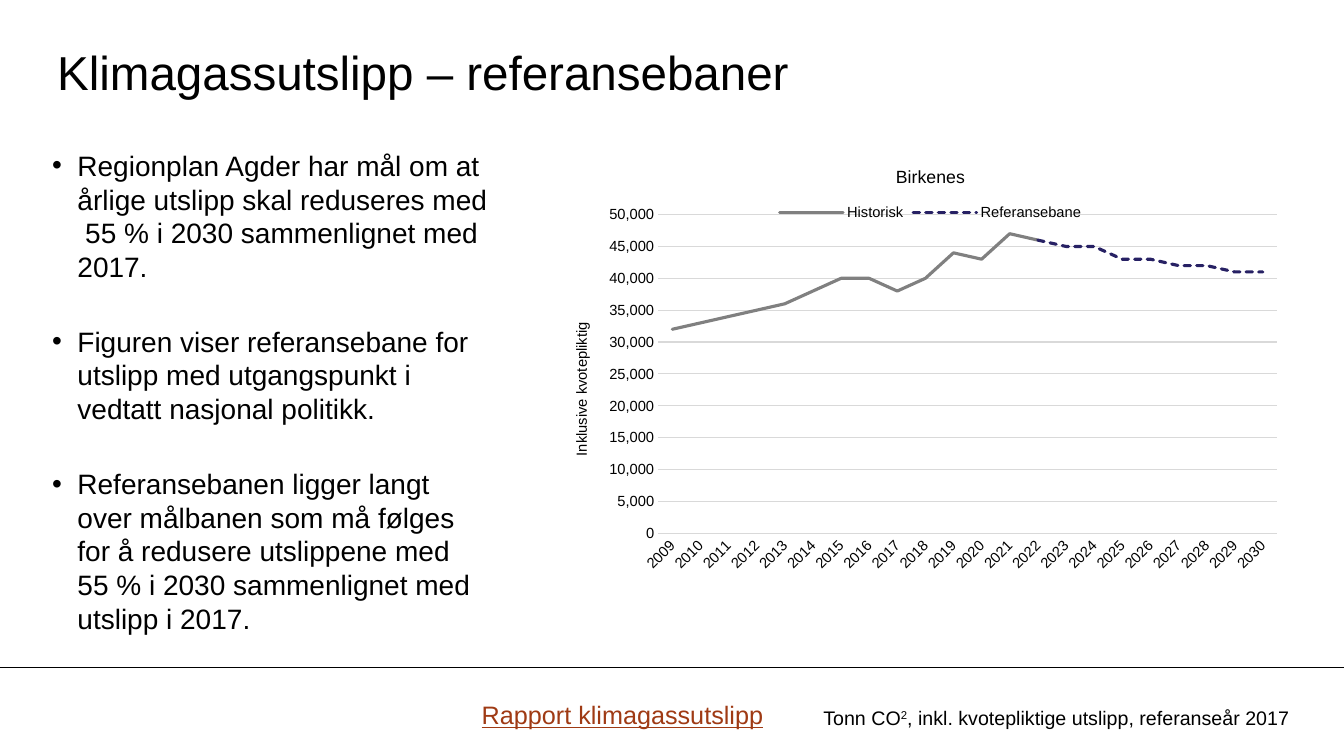
from lxml.etree import SubElement
from pptx import Presentation
from pptx.chart.data import CategoryChartData
from pptx.dml.color import RGBColor
from pptx.enum.chart import XL_CHART_TYPE, XL_LEGEND_POSITION, XL_TICK_MARK
from pptx.enum.dml import MSO_LINE
from pptx.enum.shapes import MSO_CONNECTOR
from pptx.enum.text import MSO_ANCHOR, MSO_AUTO_SIZE, PP_ALIGN
from pptx.oxml.ns import qn
from pptx.util import Pt

WIDE, HIGH = 960, 540
HUES = {"ink": "000000", "link": "9F3A14", "grid": "D9D9D9",
        "past": "808080", "path": "272164"}
POINTS = [
    "Regionplan Agder har mål om at årlige utslipp skal reduseres med  55 % i 2030 "
    "sammenlignet med 2017.",
    "Figuren viser referansebane for utslipp med utgangspunkt i vedtatt nasjonal politikk.",
    "Referansebanen ligger langt over målbanen som må følges for å redusere utslippene med "
    "55 % i 2030 sammenlignet med utslipp i 2017.",
]
YEARS = range(2009, 2031)
PAST = [32000, 33000, 34000, 35000, 36000, 38000, 40000, 40000, 38000, 40000,
        44000, 43000, 47000, 46000]
PATH = [46000, 45000, 45000, 43000, 43000, 42000, 42000, 41000, 41000]
PLOT = {"x": 0.137, "y": 0.147, "w": 0.825, "h": 0.698}
NO_PAD = {f"margin_{side}": 0 for side in ("left", "top", "right", "bottom")}


def apply(item, **vals):
    for key, val in vals.items():
        setattr(item, key, val)


def hue(name):
    return RGBColor.from_string(HUES[name])


def style(font, size, name="ink", **more):
    apply(font, size=Pt(size), name="Arial", **more)
    font.color.rgb = hue(name)


def place(shape, box):
    apply(shape, **dict(zip(("left", "top", "width", "height"), map(Pt, box))))


def stroke(line, name, width):
    line.color.rgb = hue(name)
    line.width = Pt(width)


def add_title(slide, box):
    title = slide.shapes.title
    place(title, box)
    frame = title.text_frame
    apply(frame, text="Klimagassutslipp – referansebaner", word_wrap=True,
          auto_size=MSO_AUTO_SIZE.NONE, vertical_anchor=MSO_ANCHOR.MIDDLE, **NO_PAD)
    para = frame.paragraphs[0]
    para.alignment = PP_ALIGN.LEFT
    style(para.runs[0].font, 34)


def add_list(slide, box):
    body = slide.placeholders[1]
    place(body, box)
    frame = body.text_frame
    apply(frame, text="\n".join(POINTS), word_wrap=True,
          auto_size=MSO_AUTO_SIZE.NONE, **NO_PAD)
    for num, para in enumerate(frame.paragraphs):
        props = para._p.get_or_add_pPr()
        props.set("marL", str(Pt(18)))
        props.set("indent", str(Pt(-18)))
        apply(para, line_spacing=1.0, space_before=Pt(29.65 if num else 0))
        SubElement(props, qn("a:buChar"), char="•")
        style(para.runs[0].font, 20)


def add_note(slide, box, parts, size, name="ink", **more):
    """Add one line of text; parts are (text, raised) pairs."""
    note = slide.shapes.add_textbox(*map(Pt, box))
    frame = note.text_frame
    apply(frame, word_wrap=True, auto_size=MSO_AUTO_SIZE.SHAPE_TO_FIT_TEXT)
    for text, raised in parts:
        run = frame.paragraphs[0].add_run()
        run.text = text
        style(run.font, size, name, **more)
        if raised:
            run.font._element.set("baseline", "30000")


def add_foot(slide, top):
    rule = slide.shapes.add_connector(MSO_CONNECTOR.STRAIGHT, 0, Pt(top), Pt(WIDE), Pt(top))
    stroke(rule.line, "ink", 0.75)
    SubElement(rule._element.spPr, qn("a:effectLst"))
    add_note(slide, (581, top + 23.8, 366.5, 24.5),
             [("Tonn CO", False), ("2", True),
              (", inkl. kvotepliktige utslipp, referanseår 2017", False)], 14)
    add_note(slide, (337, top + 19.5, 227.5, 29),
             [("Rapport klimagassutslipp", False)], 18, "link", underline=True)


def set_plot(chart):
    """Fix the inner plot area as shares of the chart."""
    area = chart._chartSpace.chart.plotArea
    for old in area.findall(qn("c:layout")):
        area.remove(old)
    layout = SubElement(area, qn("c:layout"))
    area.insert(0, layout)
    manual = SubElement(layout, qn("c:manualLayout"))
    vals = {"layoutTarget": "inner", "xMode": "edge", "yMode": "edge", **PLOT}
    for key, val in vals.items():
        SubElement(manual, qn(f"c:{key}"), val=str(val))


def set_axes(chart):
    cats, vals = chart.category_axis, chart.value_axis
    for axis in (cats, vals):
        apply(axis, major_tick_mark=XL_TICK_MARK.NONE, minor_tick_mark=XL_TICK_MARK.NONE)
        style(axis.tick_labels.font, 10.5)
    stroke(cats.format.line, "grid", 0.75)
    turn = cats._element.find(qn("c:txPr")).find(qn("a:bodyPr"))
    turn.set("rot", "-2700000")
    apply(vals, minimum_scale=0, maximum_scale=50000, major_unit=5000,
          has_major_gridlines=True)
    apply(vals.tick_labels, number_format="#,##0", number_format_is_linked=False)
    vals.format.line.fill.background()
    stroke(vals.major_gridlines.format.line, "grid", 0.75)
    set_head(vals.axis_title, "Inklusive kvotepliktig", 10.5)


def set_head(head, text, size):
    head.text_frame.text = text
    style(head.text_frame.paragraphs[0].runs[0].font, size, bold=False)


def add_graph(slide, box):
    data = CategoryChartData(number_format="#,##0")
    data.categories = [str(year) for year in YEARS]
    data.add_series("Historisk", PAST + [None] * (len(YEARS) - len(PAST)))
    data.add_series("Referansebane", [None] * (len(YEARS) - len(PATH)) + PATH)
    chart = slide.shapes.add_chart(XL_CHART_TYPE.LINE, *map(Pt, box), data).chart
    style(chart.font, 10.5)
    set_head(chart.chart_title, "Birkenes", 12.6)
    chart.has_legend = True
    apply(chart.legend, position=XL_LEGEND_POSITION.TOP, include_in_layout=False)
    style(chart.legend.font, 10.5)
    set_axes(chart)
    set_plot(chart)
    chart.plots[0].vary_by_categories = False
    for line, name in zip(chart.series, ("past", "path")):
        line.smooth = False
        stroke(line.format.line, name, 2.25)
        line._element.spPr.find(qn("a:ln")).set("cap", "rnd")
    chart.series[1].format.line.dash_style = MSO_LINE.SQUARE_DOT


def main():
    deck = Presentation()
    apply(deck, slide_width=Pt(WIDE), slide_height=Pt(HIGH))
    slide = deck.slides.add_slide(deck.slide_layouts[1])
    add_title(slide, (40.8, 24, 799, 54))
    add_list(slide, (37.3, 106, 311, 354))
    add_graph(slide, (396.8, 105.4, 535.7, 326))
    add_foot(slide, 476.6)
    deck.save("out.pptx")


if __name__ == "__main__":
    main()
